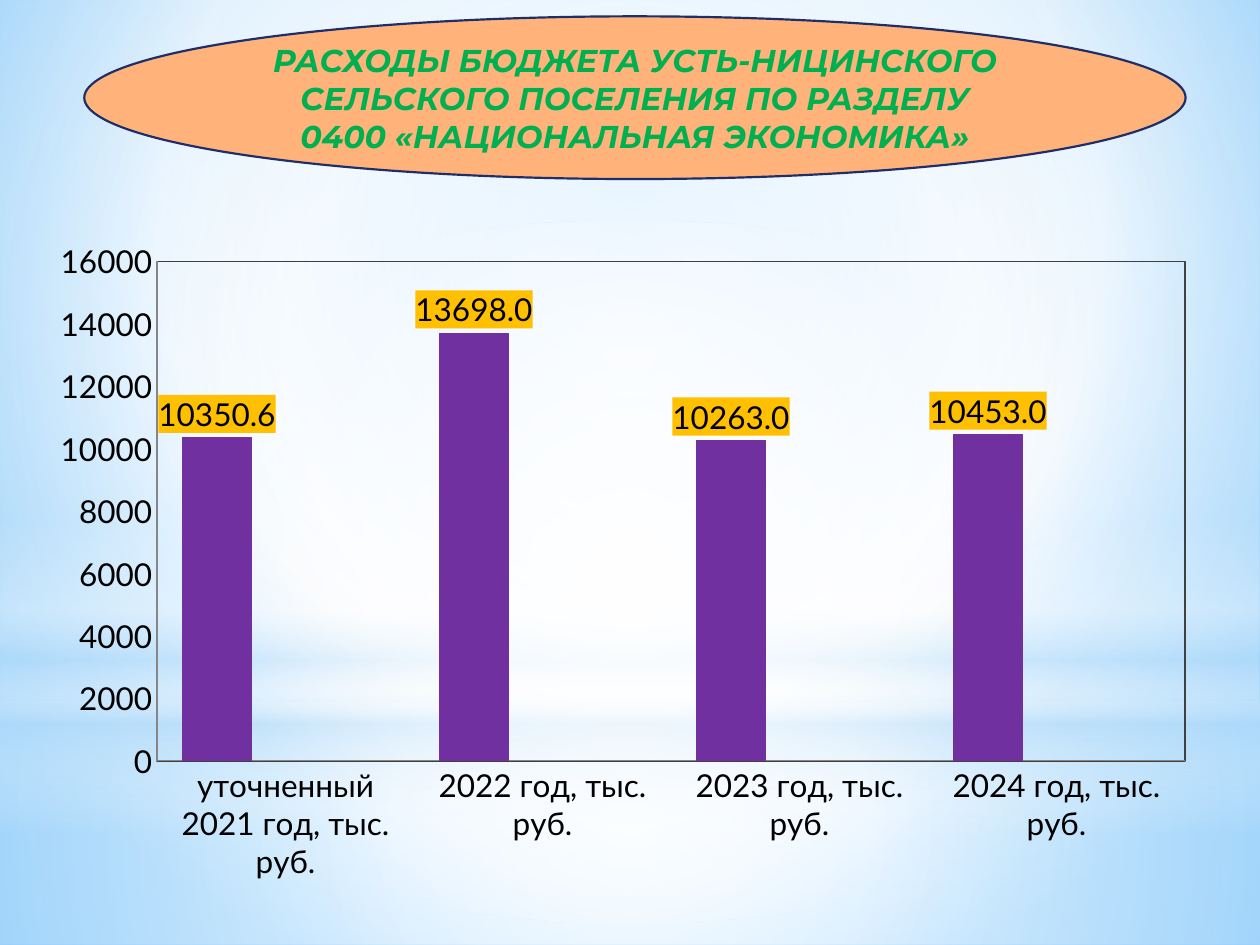
from dataclasses import dataclass

from lxml import etree
from pptx import Presentation
from pptx import util as u
from pptx.chart import data
from pptx.dml.color import RGBColor
from pptx.enum import chart as ch
from pptx.enum import shapes, text
from pptx.oxml import parse_xml
from pptx.oxml.ns import nsdecls, qn


@dataclass(frozen=True)
class Theme:
    white: str = "FFFFFF"
    haze: str = "B4DCFA"
    sky: str = "9ED5FF"
    deep_sky: str = "5BB9FF"
    peach: str = "FFB37A"
    navy: str = "1F2E69"
    green: str = "00B050"
    purple: str = "7030A0"
    amber: str = "FFC000"
    black: str = "000000"
    frame: str = "404040"
    axis: str = "868686"
    title_font: str = "Montserrat"
    chart_font: str = "Lato"
    size: int = 18


def rgb(value):
    return RGBColor.from_string(value)


def assign(target, values):
    for name, value in values.items():
        setattr(target, name, value)


class Deck:
    """Holds the theme and the current slide and draws each kind of element."""

    def __init__(self, theme):
        self.theme = theme
        self.prs = Presentation()
        assign(self.prs, {"slide_width": u.Cm(25.4), "slide_height": u.Cm(19.05)})
        self.slide = self.prs.slides.add_slide(self.prs.slide_layouts[5])

    def gradient(self, fill, owner, stops, focus=None):
        fill.gradient()
        grad = owner.find(".//" + qn("a:gradFill"))
        grad.clear()
        gs_list = etree.SubElement(grad, qn("a:gsLst"))
        for pos, color, alpha in stops:
            gs = etree.SubElement(gs_list, qn("a:gs"), pos=str(pos * 1000))
            clr = etree.SubElement(gs, qn("a:srgbClr"), val=color)
            if alpha < 100:
                etree.SubElement(clr, qn("a:alpha"), val=str(alpha * 1000))
        if focus:
            way = etree.SubElement(grad, qn("a:path"), attrib={"path": "circle"})
            sides = {side: str(v * 1000) for side, v in zip("ltrb", focus)}
            etree.SubElement(way, qn("a:fillToRect"), attrib=sides)
        else:
            etree.SubElement(grad, qn("a:lin"), ang="5400000", scaled="0")

    def background(self, stops, focus):
        fill = self.slide.background.fill
        self.gradient(fill, self.slide._element, stops, focus)

    def shape(self, kind, box):
        sp = self.slide.shapes.add_shape(kind, *map(u.Cm, box))
        sp.shadow.inherit = False
        return sp

    def glow(self, kind, top, height, stops, focus=None):
        sp = self.shape(kind, (0, top, 25.4, height))
        sp.line.fill.background()
        self.gradient(sp.fill, sp._element, stops, focus)

    def oval(self, box):
        sp = self.shape(shapes.MSO_SHAPE.OVAL, box)
        sp.fill.solid()
        sp.fill.fore_color.rgb = rgb(self.theme.peach)
        sp.line.color.rgb = rgb(self.theme.navy)
        sp.line.width = u.Pt(1.25)

    def title(self, words, box):
        sp = self.slide.shapes.title
        self.slide.shapes._spTree.append(sp._element)
        assign(sp, dict(zip(("left", "top", "width", "height"), map(u.Cm, box))))
        tf = sp.text_frame
        assign(tf, {"text": words, "word_wrap": True,
                    "auto_size": text.MSO_AUTO_SIZE.NONE,
                    "vertical_anchor": text.MSO_ANCHOR.MIDDLE})
        p = tf.paragraphs[0]
        p.alignment = text.PP_ALIGN.CENTER
        r = p.runs[0]
        assign(r.font, {"name": self.theme.title_font, "size": u.Pt(self.theme.size),
                        "bold": True, "italic": True})
        r.font.color.rgb = rgb(self.theme.green)

    def columns(self, box, cats, series, plot_box):
        t = self.theme
        cd = data.CategoryChartData()
        cd.categories = cats
        for name, values in series:
            cd.add_series(name, values)
        chart = self.slide.shapes.add_chart(
            ch.XL_CHART_TYPE.COLUMN_CLUSTERED, *map(u.Cm, box), cd).chart
        assign(chart, {"has_title": False, "has_legend": False})
        assign(chart.font, {"name": t.chart_font, "size": u.Pt(t.size)})
        chart.font.color.rgb = rgb(t.black)
        plot = chart.plots[0]
        assign(plot, {"gap_width": 75, "overlap": 0, "vary_by_categories": False})
        for axis in (chart.category_axis, chart.value_axis):
            assign(axis, {"major_tick_mark": ch.XL_TICK_MARK.NONE,
                          "minor_tick_mark": ch.XL_TICK_MARK.NONE,
                          "has_major_gridlines": False})
            axis.format.line.color.rgb = rgb(t.axis)
            axis.format.line.width = u.Pt(0.75)
        assign(chart.value_axis, {"minimum_scale": 0, "maximum_scale": 16000,
                                  "major_unit": 2000})
        assign(chart.value_axis.tick_labels, {"number_format": "0",
                                              "number_format_is_linked": False})
        for ser, color in zip(plot.series, (t.purple, t.deep_sky, t.green)):
            ser.format.fill.solid()
            ser.format.fill.fore_color.rgb = rgb(color)
        first = plot.series[0]
        first.format.line.color.rgb = rgb(t.purple)
        first.format.line.width = u.Pt(0.75)
        self.value_labels(first.data_labels)
        self.plot_frame(chart, plot_box)

    def value_labels(self, labels):
        assign(labels, {"show_value": True, "number_format": "0.0",
                        "number_format_is_linked": False,
                        "position": ch.XL_LABEL_POSITION.OUTSIDE_END})
        labels._element.find(qn("c:numFmt")).addnext(parse_xml(
            f'<c:spPr {nsdecls("c", "a")}><a:solidFill>'
            f'<a:srgbClr val="{self.theme.amber}"/></a:solidFill></c:spPr>'))

    def plot_frame(self, chart, plot_box):
        area = chart._chartSpace.find(".//" + qn("c:plotArea"))
        for old in area.findall(qn("c:layout")):
            area.remove(old)
        layout = parse_xml(f'<c:layout {nsdecls("c")}><c:manualLayout/></c:layout>')
        rules = [("layoutTarget", "inner"), ("xMode", "edge"), ("yMode", "edge")]
        for tag, value in rules + list(zip("xywh", plot_box)):
            etree.SubElement(layout[0], qn(f"c:{tag}"), val=str(value))
        area.insert(0, layout)
        area.append(parse_xml(
            f'<c:spPr {nsdecls("c", "a")}><a:noFill/><a:ln w="9525"><a:solidFill>'
            f'<a:srgbClr val="{self.theme.frame}"/></a:solidFill></a:ln></c:spPr>'))


def main():
    t = Theme()
    deck = Deck(t)
    rect, oval = shapes.MSO_SHAPE.RECTANGLE, shapes.MSO_SHAPE.OVAL
    center = (50, 50, 50, 50)
    deck.background([(0, t.sky, 100), (60, t.white, 100), (100, t.deep_sky, 100)],
                    (20, 10, 20, 60))
    deck.glow(rect, 14.17, 4.88,
              [(0, t.white, 91), (37, t.white, 76), (100, t.haze, 79)], center)
    deck.glow(rect, 0, 14.17,
              [(0, t.white, 89), (48, t.white, 62), (100, t.haze, 79)], center)
    deck.glow(rect, 10.46, 6.35,
              [(0, t.white, 0), (29, t.white, 30), (45, t.haze, 40),
               (55, t.white, 26), (65, t.haze, 60), (100, t.white, 0)])
    deck.glow(oval, 4.45, 14.17, [(0, t.white, 100), (56, t.white, 0)], center)
    years = ["уточненный 2021", "2022", "2023", "2024"]
    deck.columns((0.71, 4.72, 23.39, 13.46),
                 [f"{year} год, тыс. руб." for year in years],
                 [("Series 1", (10350.6, 13698, 10263, 10453)),
                  ("Series 2", (None,) * 4), ("Series 3", (None,) * 4)],
                 (0.105, 0.041, 0.886, 0.748))
    deck.oval((1.7, 0.33, 22.2, 3.28))
    deck.title("РАСХОДЫ БЮДЖЕТА УСТЬ-НИЦИНСКОГО СЕЛЬСКОГО ПОСЕЛЕНИЯ ПО РАЗДЕЛУ "
               "0400 «НАЦИОНАЛЬНАЯ ЭКОНОМИКА»", (4.95, 0.81, 15.7, 2.32))
    deck.prs.save("out.pptx")


if __name__ == "__main__":
    main()
